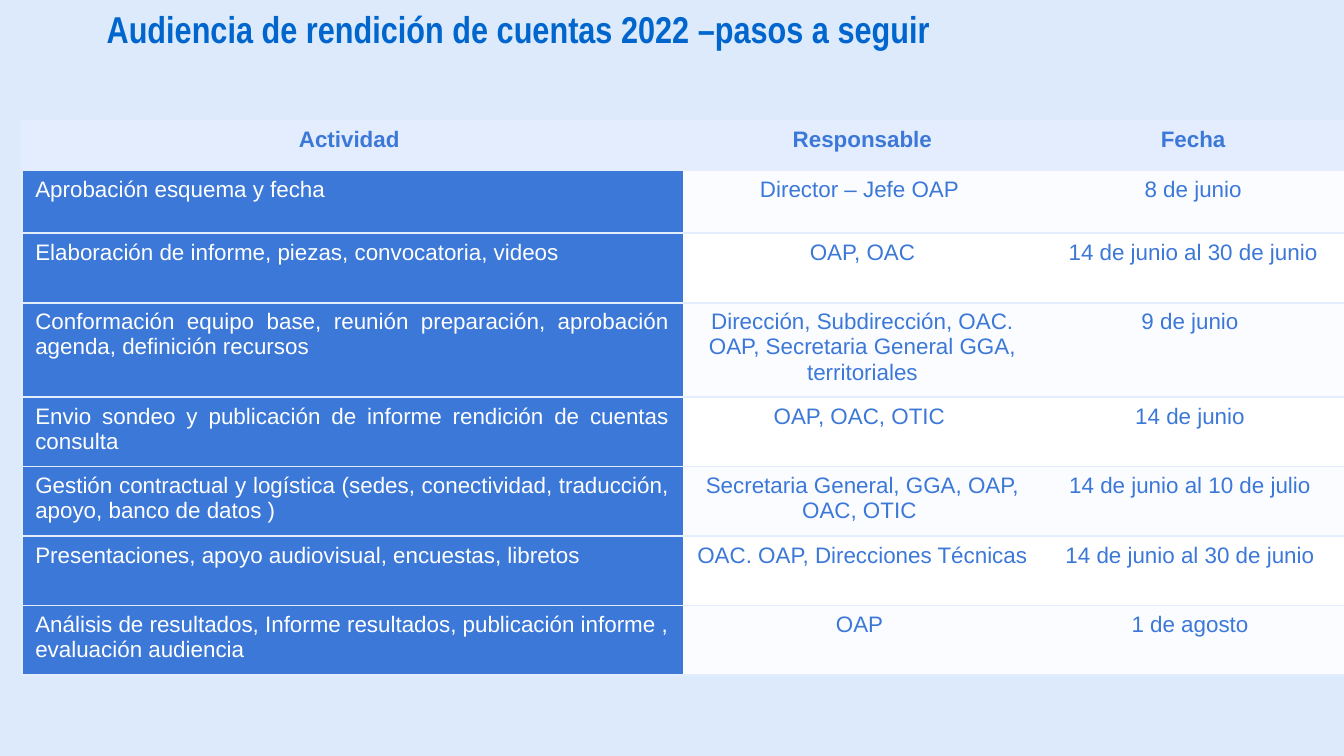
from pptx import Presentation
from pptx.dml.color import RGBColor
from pptx.enum.text import PP_ALIGN
from pptx.oxml import parse_xml
from pptx.oxml.ns import nsdecls
from pptx.util import Pt

COLORS = {
    "back": "DCEAFB", "title": "0066CD", "blue": "3C78D8", "pale": "E4EDFE",
    "band": "FAFCFF", "white": "FFFFFF",
}
ROWS = [
    ("Actividad ", "Responsable", "Fecha"),
    ("Aprobación esquema y fecha ", "Director – Jefe OAP ", "8 de junio"),
    ("Elaboración de informe, piezas, convocatoria, videos ", "OAP, OAC",
     "14 de junio al 30 de junio"),
    ("Conformación equipo base, reunión preparación, aprobación agenda, definición recursos ",
     "Dirección, Subdirección, OAC. OAP, Secretaria General GGA, territoriales",
     "9 de junio "),
    ("Envio sondeo y publicación de informe rendición de cuentas consulta ",
     "OAP, OAC, OTIC ", "14 de junio "),
    ("Gestión contractual y logística (sedes, conectividad, traducción, apoyo, banco de datos )",
     "Secretaria General, GGA, OAP, OAC, OTIC ", "14 de junio al 10 de julio "),
    ("Presentaciones, apoyo audiovisual, encuestas, libretos ",
     "OAC. OAP, Direcciones Técnicas ", "14 de junio al 30 de junio "),
    ("Análisis de resultados, Informe resultados, publicación informe , evaluación audiencia",
     "OAP ", "1 de agosto "),
]
WIDTHS = [354.2, 192.3, 162]
HEIGHTS = [26.8, 33.7] + [37.3] * 6


def rgb(name):
    return RGBColor.from_string(COLORS[name])


def add_edge(cell, side, shown):
    color = COLORS["pale"]
    paint = f'<a:solidFill><a:srgbClr val="{color}"/></a:solidFill>' if shown else "<a:noFill/>"
    cell._tc.get_or_add_tcPr().append(parse_xml(
        f'<a:ln{side} {nsdecls("a")} w="{Pt(1)}">{paint}</a:ln{side}>'))


deck = Presentation()
deck.slide_width, deck.slide_height = Pt(720), Pt(405)
slide = deck.slides.add_slide(deck.slide_layouts[6])
slide.background.fill.solid()
slide.background.fill.fore_color.rgb = rgb("back")

# Title
title = slide.shapes.add_textbox(Pt(-113.8), Pt(0), Pt(787.7), Pt(31.5))
title.text_frame.word_wrap = True
line = title.text_frame.paragraphs[0]
line.text = "Audiencia de rendición de cuentas 2022 –pasos a seguir "
line.alignment = PP_ALIGN.CENTER
line.font.name, line.font.size, line.font.bold = "Arial Narrow", Pt(20), True
line.font.color.rgb = rgb("title")

# Table grid
table = slide.shapes.add_table(len(ROWS), len(WIDTHS), Pt(11.7), Pt(64.5),
                               Pt(sum(WIDTHS)), Pt(sum(HEIGHTS))).table
table.horz_banding = False
for col, width in zip(table.columns, WIDTHS):
    col.width = Pt(width)
for row, height in zip(table.rows, HEIGHTS):
    row.height = Pt(height)

# Cells: header row, blue first column, banded rest
for r, texts in enumerate(ROWS):
    for c, text in enumerate(texts):
        cell = table.cell(r, c)
        head, first = r == 0, c == 0
        for side, shown in (("L", first), ("R", c == 2), ("T", True), ("B", True)):
            add_edge(cell, side, shown)
        fill = "pale" if head else "blue" if first else "band" if r % 2 else "white"
        cell.fill.solid()
        cell.fill.fore_color.rgb = rgb(fill)
        para = cell.text_frame.paragraphs[0]
        para.text = text
        if head or not first:
            para.alignment = PP_ALIGN.CENTER
        else:
            para.alignment = PP_ALIGN.LEFT if r == len(ROWS) - 1 else PP_ALIGN.JUSTIFY
        para.font.name, para.font.size, para.font.bold = "Arial", Pt(12), head
        para.font.color.rgb = rgb("white" if fill == "blue" else "blue")

deck.save("out.pptx")
